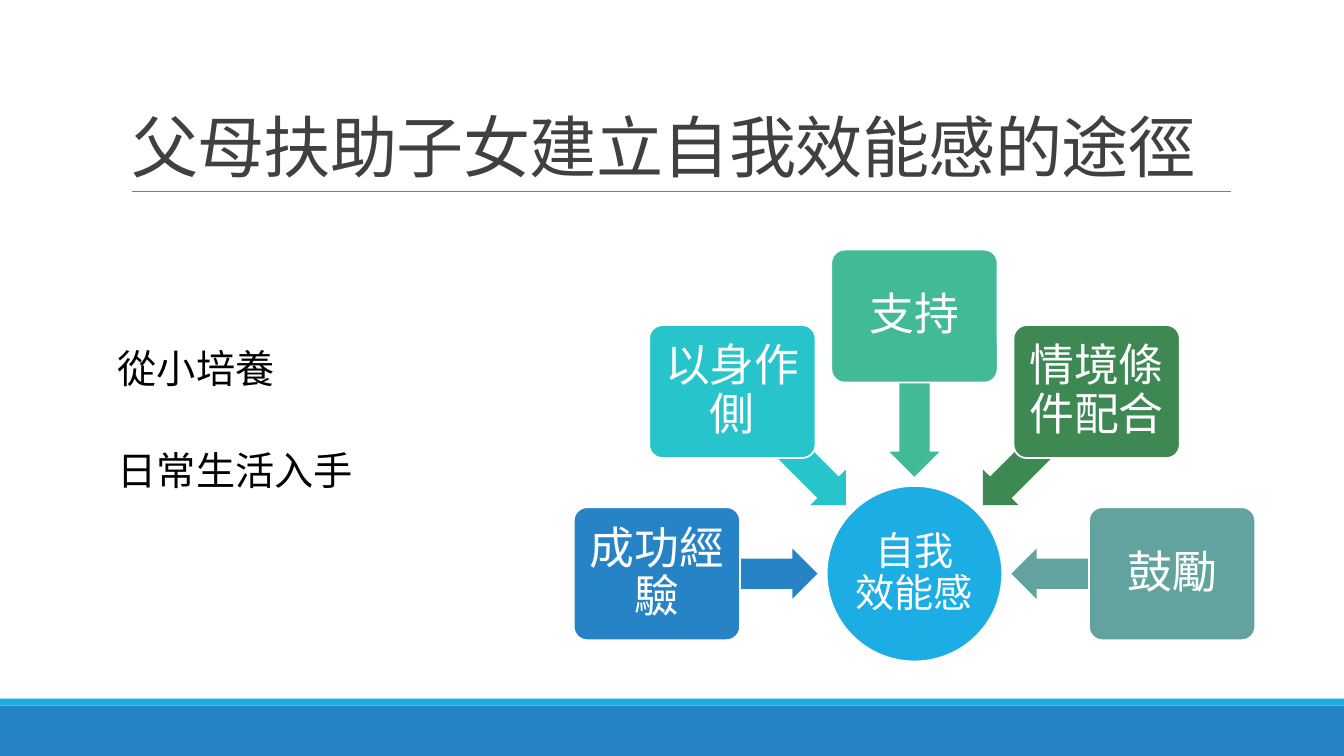
import math
from dataclasses import dataclass

from lxml import etree
from pptx import Presentation
from pptx.dml.color import RGBColor
from pptx.enum import shapes, text
from pptx.oxml.ns import qn
from pptx.util import Pt

COLORS = {
    "white": "FFFFFF", "black": "000000", "title": "404040", "rule": "808080",
    "blue": "2683C6", "sky": "1CADE4", "cyan": "28C4CC",
    "mint": "42BA97", "green": "3E8853", "sage": "62A39F",
}
FONT = "Arial"
SLIDE_W, SLIDE_H = 960, 540
HUB_X, HUB_Y, HUB_SIZE = 653.2, 409.8, 125.4
CARD_RADIUS, CARD_W, CARD_H = 184, 118.8, 95
ARROW_RADIUS, ARROW_W, ARROW_H = 126.5, 114.5, 36


@dataclass(frozen=True)
class Path:
    label: str
    color: str
    angle: int  # degrees, counter-clockwise from the right of the hub


PATHS = [
    Path("成功經驗", "blue", 180),
    Path("以身作側", "cyan", 135),
    Path("支持", "mint", 90),
    Path("情境條件配合", "green", 45),
    Path("鼓勵", "sage", 0),
]


def rgb(name: str) -> RGBColor:
    return RGBColor.from_string(COLORS[name])


def add_block(slide, kind, left: float, top: float, width: float, height: float,
              color: str, outlined: bool = False):
    block = slide.shapes.add_shape(kind, Pt(left), Pt(top), Pt(width), Pt(height))
    block.shadow.inherit = False
    block.fill.solid()
    block.fill.fore_color.rgb = rgb(color)
    if outlined:
        block.line.color.rgb = rgb("white")
        block.line.width = Pt(1.25)
    else:
        block.line.fill.background()
    return block


def add_around_hub(slide, kind, angle: int, radius: float, width: float, height: float,
                   color: str, outlined: bool = False):
    """Centre a block at an angle and distance from the hub."""
    x = HUB_X + radius * math.cos(math.radians(angle))
    y = HUB_Y - radius * math.sin(math.radians(angle))
    return add_block(slide, kind, x - width / 2, y - height / 2, width, height, color, outlined)


def set_frame(frame, anchor, inset_x: float, inset_y: float) -> None:
    frame.word_wrap = True
    frame.auto_size = text.MSO_AUTO_SIZE.NONE
    frame.vertical_anchor = anchor
    frame.margin_left = frame.margin_right = Pt(inset_x)
    frame.margin_top = frame.margin_bottom = Pt(inset_y)


def add_run(paragraph, words: str, size: float, color: str):
    run = paragraph.add_run()
    run.text = words
    run.font.name = FONT
    run.font.size = Pt(size)
    run.font.color.rgb = rgb(color)
    return run


def add_label(block, lines: list[str], size: float, inset: float) -> None:
    set_frame(block.text_frame, text.MSO_ANCHOR.MIDDLE, inset, inset)
    paragraph = block.text_frame.paragraphs[0]
    paragraph.alignment = text.PP_ALIGN.CENTER
    paragraph.line_spacing = 0.9
    for index, line in enumerate(lines):
        if index:
            paragraph.add_line_break()
        add_run(paragraph, line, size, "white")


def add_footer_bands(slide) -> None:
    for top, height, color in [(504, 36, "blue"), (499, 5, "sky")]:
        add_block(slide, shapes.MSO_SHAPE.RECTANGLE, 0, top, SLIDE_W, height, color)


def add_heading(slide) -> None:
    rule = slide.shapes.add_connector(
        shapes.MSO_CONNECTOR.STRAIGHT, Pt(94.3), Pt(136.8), Pt(879), Pt(136.8))
    rule.line.color.rgb = rgb("rule")
    rule.line.width = Pt(0.5)
    etree.SubElement(rule._element.spPr, qn("a:effectLst"))

    title = slide.shapes.title
    title.left, title.top, title.width, title.height = Pt(86.4), Pt(22.6), Pt(792), Pt(114.2)
    set_frame(title.text_frame, text.MSO_ANCHOR.BOTTOM, 7.2, 3.6)
    paragraph = title.text_frame.paragraphs[0]
    paragraph.alignment = text.PP_ALIGN.LEFT
    paragraph.line_spacing = 0.85
    run = add_run(paragraph, "父母扶助子女建立自我效能感的途徑", 48, "title")
    run.font._element.set("spc", "-50")


def add_advice(slide) -> None:
    advice = slide.shapes.add_textbox(Pt(84.2), Pt(246.2), Pt(300), Pt(158.4))
    frame = advice.text_frame
    set_frame(frame, text.MSO_ANCHOR.TOP, 0, 3.6)
    for index, (words, space_before) in enumerate([("從小培養", 2), ("日常生活入手", 38.5)]):
        paragraph = frame.add_paragraph() if index else frame.paragraphs[0]
        paragraph.line_spacing = 0.9
        paragraph.space_before = Pt(space_before)
        paragraph.space_after = Pt(4)
        add_run(paragraph, words, 28, "black")


def add_efficacy_diagram(slide) -> None:
    hub = add_block(slide, shapes.MSO_SHAPE.OVAL, HUB_X - HUB_SIZE / 2, HUB_Y - HUB_SIZE / 2,
                    HUB_SIZE, HUB_SIZE, "sky", outlined=True)
    add_label(hub, ["自我", "效能感"], 28, 1.4)
    for path in PATHS:
        arrow = add_around_hub(slide, shapes.MSO_SHAPE.LEFT_ARROW, path.angle,
                               ARROW_RADIUS, ARROW_W, ARROW_H, path.color)
        arrow.adjustments[0], arrow.adjustments[1] = 0.6, 0.5
        arrow.rotation = -path.angle % 360
        card = add_around_hub(slide, shapes.MSO_SHAPE.ROUNDED_RECTANGLE, path.angle,
                              CARD_RADIUS, CARD_W, CARD_H, path.color, outlined=True)
        card.adjustments[0] = 0.1
        add_label(card, [path.label], 32, 5)


def main() -> None:
    deck = Presentation()
    deck.slide_width, deck.slide_height = Pt(SLIDE_W), Pt(SLIDE_H)
    slide = deck.slides.add_slide(deck.slide_layouts.get_by_name("Title Only"))
    add_footer_bands(slide)
    add_heading(slide)
    add_advice(slide)
    add_efficacy_diagram(slide)
    deck.save("out.pptx")


if __name__ == "__main__":
    main()
